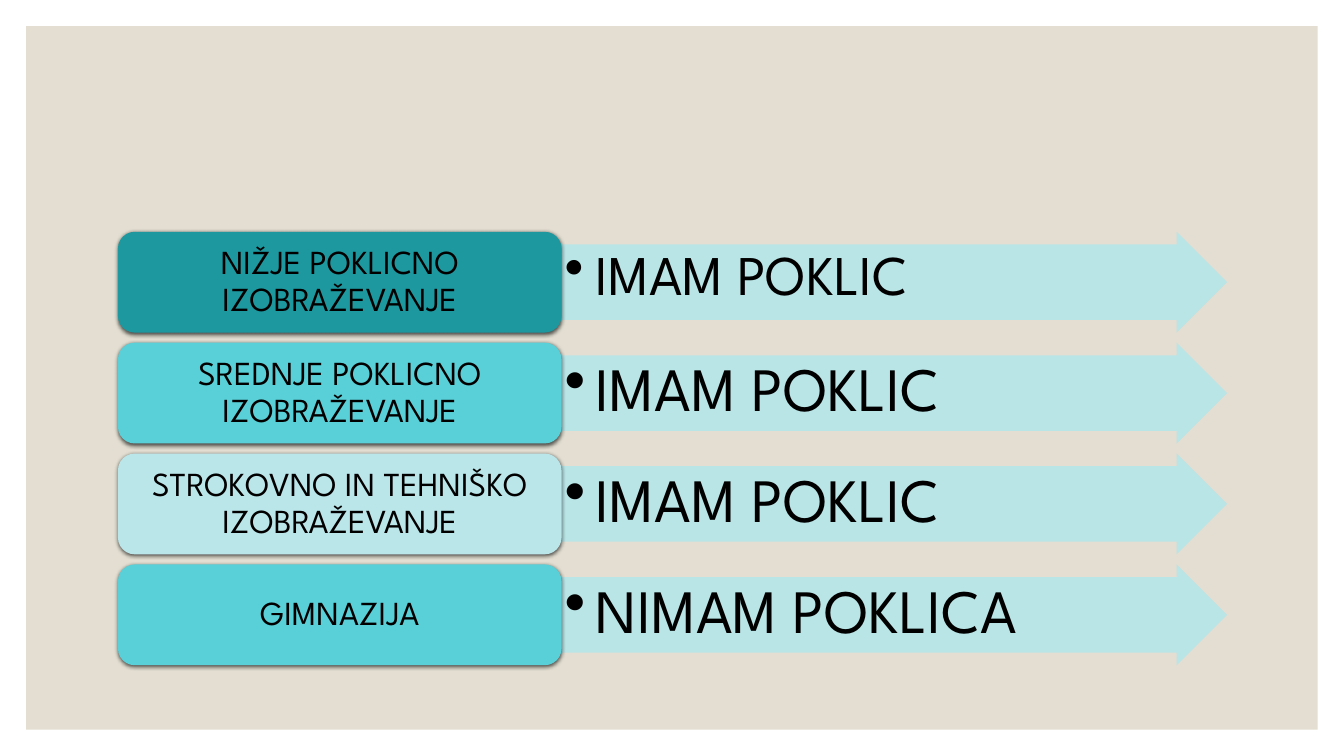
from pptx import Presentation
from pptx.dml.color import RGBColor as Rgb
from pptx.enum.shapes import MSO_SHAPE as Kind
from pptx.enum.text import MSO_ANCHOR as Anchor, PP_ALIGN as Align
from pptx.oxml import parse_xml
from pptx.oxml.ns import nsdecls, qn
from pptx.util import Inches, Pt

ROWS = [
    ("NIŽJE POKLICNO IZOBRAŽEVANJE", "IMAM POKLIC", "deep", 40),
    ("SREDNJE POKLICNO IZOBRAŽEVANJE", "IMAM POKLIC", "mid", 44),
    ("STROKOVNO IN TEHNIŠKO IZOBRAŽEVANJE", "IMAM POKLIC", "pale", 44),
    ("GIMNAZIJA", "NIMAM POKLICA", "mid", 44),
]
COLORS = {
    "sand": "E3DED1", "deep": "1D989F", "mid": "59CFD7",
    "pale": "BAE6EA", "arrow": "B5E6EA", "ink": "000000",
}
FONT = "League Spartan"
WIDTH, HEIGHT = 13.33, 7.5
EDGE = 0.26
LEFT, TOP = 1.17, 2.3
CARD, ARROW = 4.4, 6.6
ROW, STEP = 1, 1.1
PAD = 0.05
SHAFT = 0.75
HANG = 0.31

deck = Presentation()
deck.slide_width, deck.slide_height = Inches(WIDTH), Inches(HEIGHT)
slide = deck.slides.add_slide(deck.slide_layouts[6])


def add_shape(kind, box, color):
    shape = slide.shapes.add_shape(kind, *map(Inches, box))
    shape.fill.solid()
    shape.fill.fore_color.rgb = Rgb.from_string(COLORS[color])
    shape.line.fill.background()
    shape.shadow.inherit = False
    return shape


def add_shade(shape):
    shape._element.spPr.find(qn("a:effectLst")).append(parse_xml(
        f'<a:outerShdw {nsdecls("a")} blurRad="{Pt(3)}" dist="{Pt(1)}" '
        'dir="5400000" rotWithShape="0"><a:srgbClr val="000000">'
        '<a:alpha val="63000"/></a:srgbClr></a:outerShdw>'))


def add_text(text, box, size, align=Align.LEFT, anchor=Anchor.TOP,
             inset=None, bullet=False):
    frame = slide.shapes.add_textbox(*map(Inches, box)).text_frame
    frame.word_wrap = True
    frame.vertical_anchor = anchor
    if inset is not None:
        frame.margin_left = frame.margin_right = Inches(inset)
        frame.margin_top = frame.margin_bottom = Inches(inset)
    para = frame.paragraphs[0]
    para.alignment = align
    para.line_spacing = 0.9
    run = para.add_run()
    run.text = text
    run.font.size, run.font.name = Pt(size), FONT
    run.font.color.rgb = Rgb.from_string(COLORS["ink"])
    if bullet:
        para.level = 1
        props = para._p.get_or_add_pPr()
        props.set("marL", str(Inches(HANG)))
        props.set("indent", str(-Inches(HANG)))
        props.append(parse_xml(f'<a:buChar {nsdecls("a")} char="•"/>'))


add_shape(Kind.RECTANGLE,
          (EDGE, EDGE, WIDTH - 2 * EDGE, HEIGHT - 2 * EDGE), "sand")

for i, (path_name, result, color, size) in enumerate(ROWS):
    top = TOP + i * STEP
    mid = LEFT + CARD
    arrow = add_shape(Kind.RIGHT_ARROW, (mid, top, ARROW, ROW), "arrow")
    arrow.adjustments[0], arrow.adjustments[1] = SHAFT, 0.5
    tint = arrow._element.spPr.find(".//" + qn("a:srgbClr"))
    tint.append(parse_xml(f'<a:alpha {nsdecls("a")} val="90000"/>'))
    add_text(result, (mid, top + ROW * (1 - SHAFT) / 2,
                      ARROW - ROW * SHAFT / 2, ROW * SHAFT),
             size, inset=0.03, bullet=True)
    add_shade(add_shape(Kind.ROUNDED_RECTANGLE, (LEFT, top, CARD, ROW), color))
    add_text(path_name, (LEFT + PAD, top + PAD, CARD - 2 * PAD, ROW - 2 * PAD),
             24, align=Align.CENTER, anchor=Anchor.MIDDLE)

deck.save("out.pptx")
